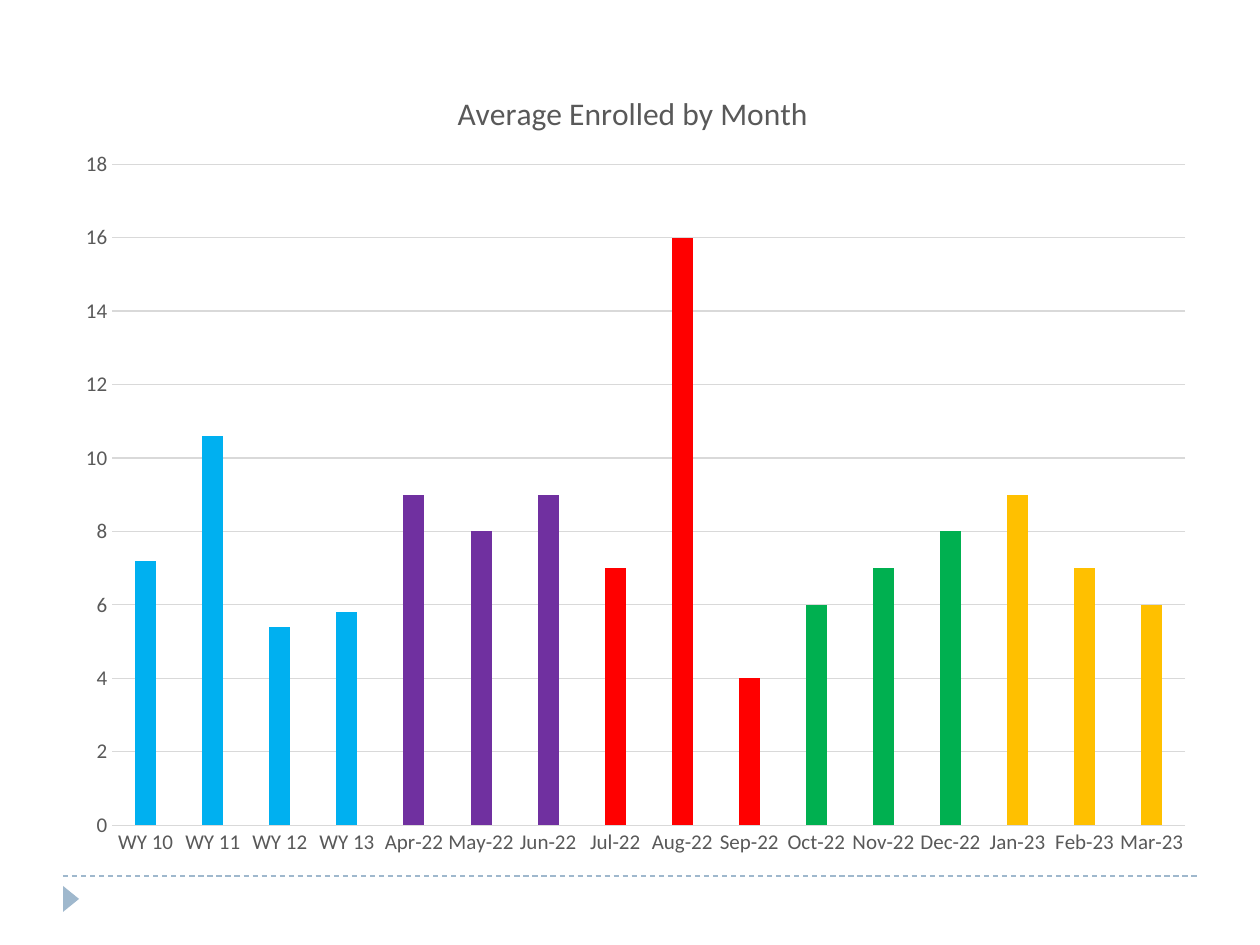
"""Build the slide with the monthly average enrolment chart."""
import lxml.etree
import pptx
import pptx.chart.data
import pptx.dml.color
import pptx.enum.chart
import pptx.enum.dml
import pptx.enum.shapes
import pptx.oxml.ns
import pptx.util

PX = pptx.util.Inches(1) // 126
RGB = pptx.dml.color.RGBColor
ACCENT = RGB(0x9F, 0xB8, 0xCD)
TEXT = RGB(0x59, 0x59, 0x59)
GRID = RGB(0xD9, 0xD9, 0xD9)
YEAR_BLUE = RGB(0x00, 0xB0, 0xF0)
QUARTER_COLORS = [RGB(0x70, 0x30, 0xA0), RGB(0xFF, 0x00, 0x00),
                  RGB(0x00, 0xB0, 0x50), RGB(0xFF, 0xC0, 0x00)]
HAIRLINE = pptx.util.Pt(0.75)

YEARS = {"WY 10": 7.2, "WY 11": 10.6, "WY 12": 5.4, "WY 13": 5.8}
MONTHS = {"Apr-22": 9, "May-22": 8, "Jun-22": 9, "Jul-22": 7, "Aug-22": 16, "Sep-22": 4,
          "Oct-22": 6, "Nov-22": 7, "Dec-22": 8, "Jan-23": 9, "Feb-23": 7, "Mar-23": 6}


def assign(target, values):
    """Set each named attribute of the target."""
    for name, value in values.items():
        setattr(target, name, value)


class SlideBuilder:
    """Hold the style and the current slide."""

    def __init__(self, slide, font="Calibri"):
        """Keep the slide and the font name."""
        self.slide = slide
        self.font = font

    def style_font(self, font, size):
        """Give a font the slide's face and text colour."""
        assign(font, {"name": self.font, "size": pptx.util.Pt(size), "bold": False})
        font.color.rgb = TEXT

    def style_line(self, line, color):
        """Give a line its colour and the thin width."""
        line.color.rgb = color
        line.width = HAIRLINE

    def place(self, element, index, **fractions):
        """Fix a chart part at fractions of the chart area."""
        qn = pptx.oxml.ns.qn
        for previous in element.findall(qn("c:layout")):
            element.remove(previous)
        layout = lxml.etree.Element(qn("c:layout"))
        manual = lxml.etree.SubElement(layout, qn("c:manualLayout"))
        settings = {"xMode": "edge", "yMode": "edge", **fractions}
        if "w" in fractions:
            settings = {"layoutTarget": "inner", **settings}
        for name, value in settings.items():
            lxml.etree.SubElement(manual, qn(f"c:{name}")).set("val", str(value))
        element.insert(index, layout)

    def dashed_rule(self, left, top, right):
        """Draw a horizontal dashed rule."""
        rule = self.slide.shapes.add_connector(
            pptx.enum.shapes.MSO_CONNECTOR.STRAIGHT, left * PX, top * PX, right * PX, top * PX)
        self.style_line(rule.line, ACCENT)
        rule.line.dash_style = pptx.enum.dml.MSO_LINE.DASH
        lxml.etree.SubElement(rule._element.spPr, pptx.oxml.ns.qn("a:effectLst"))

    def pointer(self, left, top, width, height):
        """Draw a triangle that points right."""
        triangle = self.slide.shapes.add_shape(
            pptx.enum.shapes.MSO_SHAPE.ISOSCELES_TRIANGLE,
            left * PX, top * PX, width * PX, height * PX)
        triangle.rotation = 90
        triangle.shadow.inherit = False
        triangle.fill.solid()
        triangle.fill.fore_color.rgb = ACCENT
        triangle.line.fill.background()

    def column_chart(self, left, top, width, height, title, values, colors):
        """Draw a column chart with one colour per column."""
        data = pptx.chart.data.CategoryChartData()
        data.categories = list(values)
        data.add_series("Series 1", list(values.values()))
        chart = self.slide.shapes.add_chart(
            pptx.enum.chart.XL_CHART_TYPE.COLUMN_CLUSTERED,
            left * PX, top * PX, width * PX, height * PX, data).chart
        assign(chart, {"has_legend": False, "has_title": True})
        self.style_font(chart.font, 10)
        heading = chart.chart_title
        heading.include_in_layout = False
        heading.text_frame.text = title
        self.style_font(heading.text_frame.paragraphs[0].runs[0].font, 18)
        self.place(heading._element, 1, x=0.34, y=0.04)
        plot = chart.plots[0]
        assign(plot, {"gap_width": 219, "overlap": -27, "vary_by_categories": False})
        self.place(plot._element.getparent(), 0, x=0.043, y=0.136, w=0.938, h=0.807)
        self.style_axes(chart)
        series = plot.series[0]
        series.invert_if_negative = False
        series.format.fill.solid()
        series.format.fill.fore_color.rgb = colors[0]
        for index, color in enumerate(colors):
            if color != colors[0]:
                fill = series.points[index].format.fill
                fill.solid()
                fill.fore_color.rgb = color

    def style_axes(self, chart):
        """Style both axes and the gridlines."""
        no_tick = pptx.enum.chart.XL_TICK_MARK.NONE
        for axis in (chart.category_axis, chart.value_axis):
            assign(axis, {"major_tick_mark": no_tick, "minor_tick_mark": no_tick})
            self.style_font(axis.tick_labels.font, 12)
        self.style_line(chart.category_axis.format.line, GRID)
        scale = chart.value_axis
        assign(scale, {"minimum_scale": 0, "maximum_scale": 18, "major_unit": 2,
                       "has_major_gridlines": True})
        scale.format.line.fill.background()
        self.style_line(scale.major_gridlines.format.line, GRID)


def main():
    """Build and save the presentation."""
    deck = pptx.Presentation()
    assign(deck, {"slide_width": 1260 * PX, "slide_height": 945 * PX})
    builder = SlideBuilder(deck.slides.add_slide(deck.slide_layouts[6]))
    builder.dashed_rule(63, 876, 1197)
    builder.pointer(58, 891, 26, 16)
    colors = [YEAR_BLUE] * len(YEARS)
    colors += [QUARTER_COLORS[month // 3] for month in range(len(MONTHS))]
    builder.column_chart(63, 53, 1144, 819, "Average Enrolled by Month",
                         {**YEARS, **MONTHS}, colors)
    deck.save("out.pptx")


if __name__ == "__main__":
    main()
